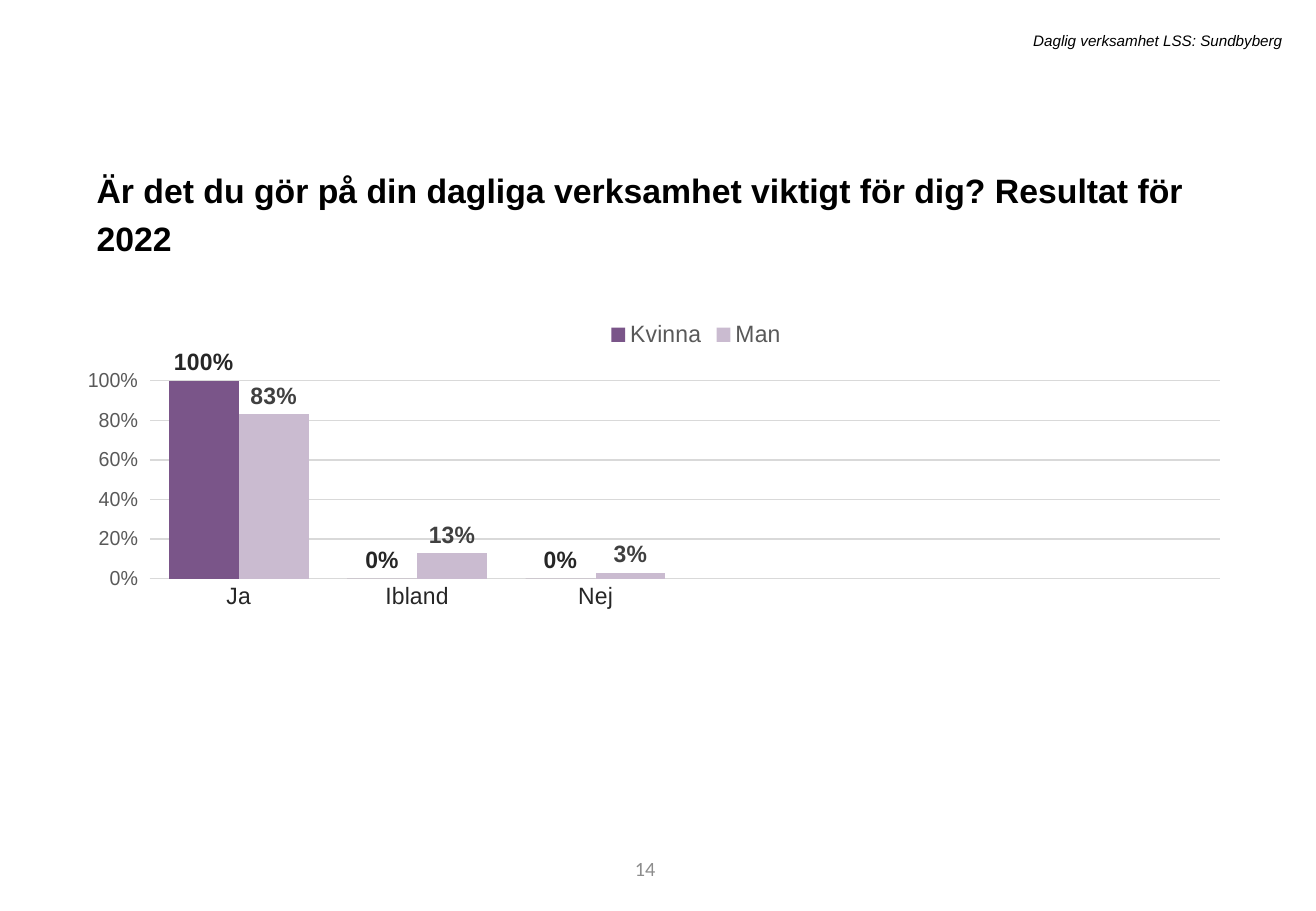
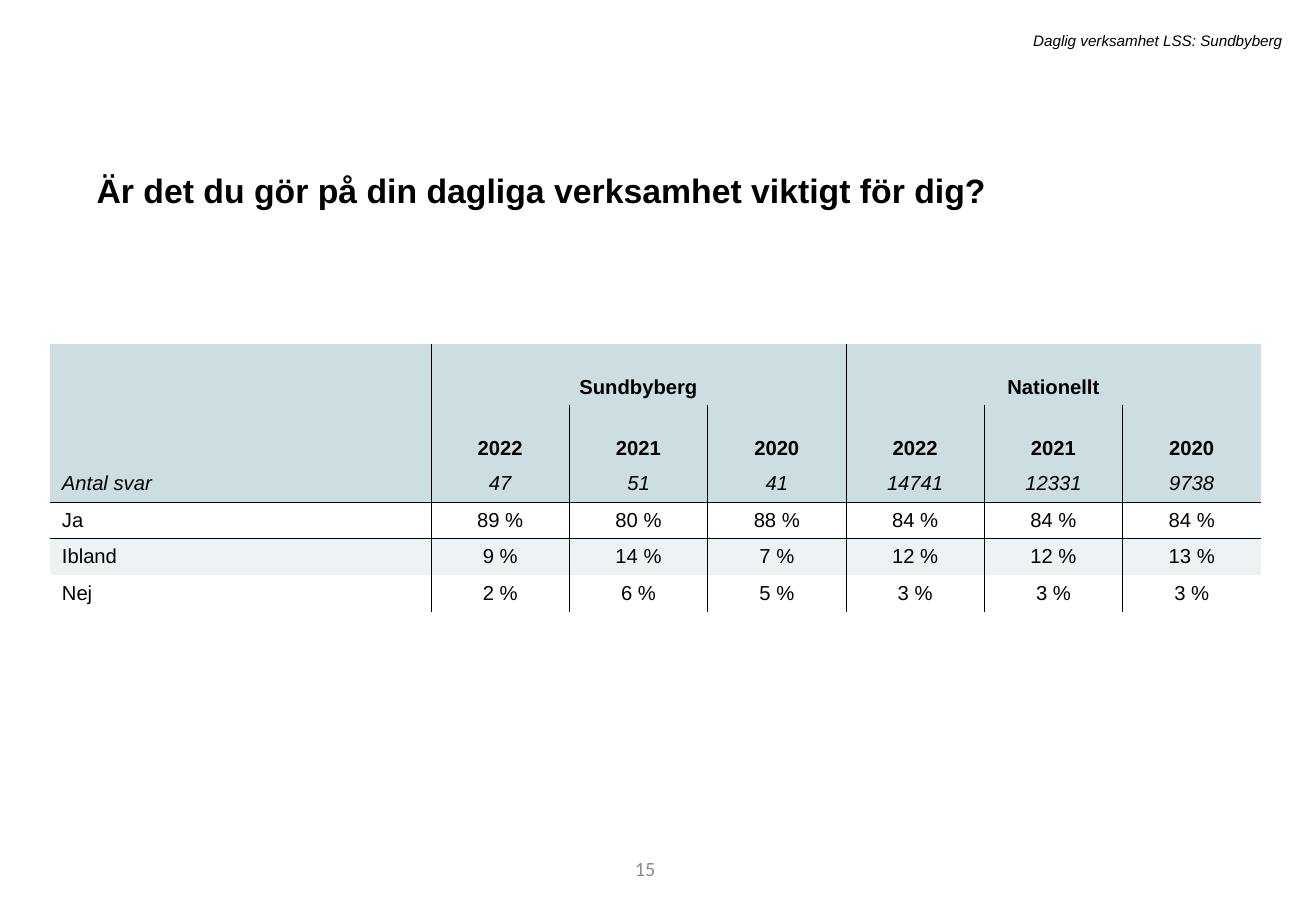
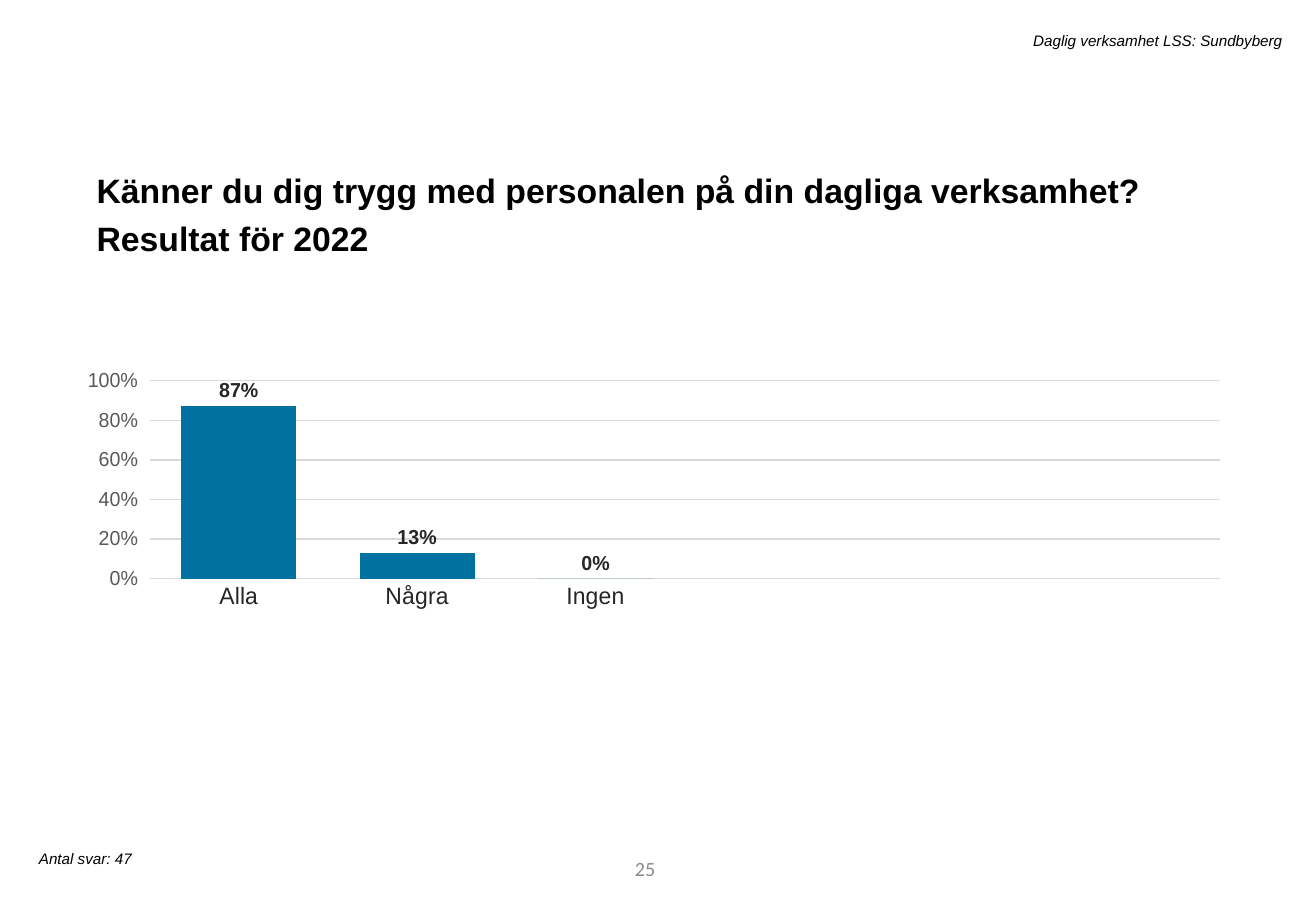
from lxml import etree
from pptx import Presentation
from pptx.chart.data import CategoryChartData
from pptx.dml.color import RGBColor
from pptx.enum.chart import XL_CHART_TYPE as CT, XL_LABEL_POSITION as LP
from pptx.enum.chart import XL_LEGEND_POSITION as LEG, XL_TICK_MARK as TICK
from pptx.enum.text import MSO_ANCHOR as ANC, MSO_AUTO_SIZE as FIT, PP_ALIGN as AL
from pptx.oxml import parse_xml
from pptx.oxml.ns import nsdecls, qn
from pptx.util import Pt

C = {"black": "000000", "number": "8C8C8C", "dark": "262626", "mid": "404040",
     "grey": "595959", "grid": "D9D9D9", "woman": "7A5589", "man": "CABBD0",
     "blue": "0071A1", "head": "CCDEE1", "band": "EDF3F4"}
NO_STYLE = "{2D5ABB26-0587-4C30-8999-92F81FD0307C}"

SLIDES = [
    {"number": "14",
     "title": "Är det du gör på din dagliga verksamhet viktigt för dig? Resultat för 2022",
     "cats": ["Ja", "Ibland", "Nej"], "label_size": 14,
     "series": [("Kvinna", [1, 0, 0], "woman", "dark"),
                ("Man", [0.83, 0.13, 0.03], "man", "mid")]},
    {"number": "15",
     "title": "Är det du gör på din dagliga verksamhet viktigt för dig?",
     "rows": [["", "Sundbyberg", "", "", "Nationellt", "", ""],
              ["", "2022", "2021", "2020", "2022", "2021", "2020"],
              ["Antal svar", "47", "51", "41", "14741", "12331", "9738"],
              ["Ja", "89 %", "80 %", "88 %", "84 %", "84 %", "84 %"],
              ["Ibland", "9 %", "14 %", "7 %", "12 %", "12 %", "13 %"],
              ["Nej", "2 %", "6 %", "5 %", "3 %", "3 %", "3 %"]]},
    {"number": "25",
     "title": "Känner du dig trygg med personalen på din dagliga verksamhet? Resultat för 2022",
     "cats": ["Alla", "Några", "Ingen"], "label_size": 12,
     "series": [("Series 1", [0.87, 0.13, 0], "blue", "dark")],
     "note": "Antal svar: 47"},
]


def style(font, size, color="black", bold=False, italic=False, name="Arial"):
    font.name, font.size, font.bold, font.italic = name, Pt(size), bold, italic
    font.color.rgb = RGBColor.from_string(C[color])


def add_text(s, text, box, align=AL.LEFT, wrap=True, **look):
    tf = s.shapes.add_textbox(*map(Pt, box)).text_frame
    tf.word_wrap = wrap
    p = tf.paragraphs[0]
    p.alignment = align
    r = p.add_run()
    r.text = text
    style(r.font, **look)
    return tf


prs = Presentation()
prs.slide_width, prs.slide_height = Pt(780), Pt(540)

for data in SLIDES:
    s = prs.slides.add_slide(prs.slide_layouts[5])

    # Title
    sp = s.shapes.title
    sp.left, sp.top, sp.width, sp.height = Pt(50), Pt(92), Pt(677), Pt(34)
    tf = sp.text_frame
    tf.word_wrap, tf.auto_size, tf.vertical_anchor = True, FIT.SHAPE_TO_FIT_TEXT, ANC.TOP
    p = tf.paragraphs[0]
    p.alignment, p.line_spacing, p.space_before = AL.LEFT, 1.2, Pt(10)
    r = p.add_run()
    r.text = data["title"]
    style(r.font, 20, bold=True)

    # Header, slide number and note
    tf = add_text(s, "Daglig verksamhet LSS: Sundbyberg", (129, 15, 638, 18),
                  AL.RIGHT, size=9, italic=True)
    tf.auto_size = FIT.SHAPE_TO_FIT_TEXT
    tf = add_text(s, data["number"], (220, 500, 175.5, 29), AL.RIGHT,
                  size=12, color="number", name="Calibri")
    tf.vertical_anchor = ANC.MIDDLE
    if "note" in data:
        tf = add_text(s, data["note"], (16, 500, 204, 18), wrap=False, size=9, italic=True)
        tf.auto_size = FIT.SHAPE_TO_FIT_TEXT

    # Column chart, with three empty categories on the right
    if "series" in data:
        cd = CategoryChartData(number_format="0%")
        cd.categories = data["cats"] + [""] * 3
        for name, values, _, _ in data["series"]:
            cd.add_series(name, values + [None] * 3)
        chart = s.shapes.add_chart(CT.COLUMN_CLUSTERED, Pt(52), Pt(182),
                                   Pt(677), Pt(284), cd).chart
        style(chart.font, 10)
        chart.has_title = False
        plot = chart.plots[0]
        plot.gap_width, plot.vary_by_categories = 55, False

        for ser, (_, _, fill, label) in zip(plot.series, data["series"]):
            ser.format.fill.solid()
            ser.format.fill.fore_color.rgb = RGBColor.from_string(C[fill])
            dl = ser.data_labels
            dl.show_value, dl.position = True, LP.OUTSIDE_END
            dl.number_format, dl.number_format_is_linked = "0%", False
            style(dl.font, data["label_size"], label, bold=True)

        cat, val = chart.category_axis, chart.value_axis
        cat.major_tick_mark = TICK.NONE
        style(cat.tick_labels.font, 14, "dark")
        val.minimum_scale, val.maximum_scale, val.major_unit = 0, 1, 0.2
        val.major_tick_mark = TICK.OUTSIDE
        val.tick_labels.number_format = "0%"
        val.tick_labels.number_format_is_linked = False
        style(val.tick_labels.font, 12, "grey")
        val.format.line.fill.background()
        for line in (cat.format.line, val.major_gridlines.format.line):
            line.width = Pt(0.75)
            line.color.rgb = RGBColor.from_string(C["grid"])

        # Fixed places of the plot area and the legend
        area = chart.plots[0]._element.getparent()
        for old in area.findall(qn("c:layout")):
            area.remove(old)
        marks = {"layoutTarget": "inner", "xMode": "edge", "yMode": "edge",
                 "x": 0.03, "y": 0.15, "w": 0.96, "h": 0.41}
        marks.update(x=0.025, y=0.154, w=0.966, h=0.413)
        layout = parse_xml(f"<c:layout {nsdecls('c')}><c:manualLayout/></c:layout>")
        for tag, value in marks.items():
            etree.SubElement(layout[0], qn(f"c:{tag}")).set("val", str(value))
        area.insert(0, layout)

        chart.has_legend = len(data["series"]) > 1
        if chart.has_legend:
            legend = chart.legend
            legend.position, legend.include_in_layout = LEG.TOP, False
            style(legend.font, 14, "grey")
            for old in legend._element.findall(qn("c:layout")):
                legend._element.remove(old)
            layout = parse_xml(f"<c:layout {nsdecls('c')}><c:manualLayout/></c:layout>")
            for tag, value in {"xMode": "edge", "yMode": "edge", "x": 0.435, "y": 0.02}.items():
                etree.SubElement(layout[0], qn(f"c:{tag}")).set("val", str(value))
            legend._element.find(qn("c:legendPos")).addnext(layout)

    # Results table
    if "rows" in data:
        widths, heights = [226] + [82] * 6, [36, 36, 18, 20, 20, 20]
        table = s.shapes.add_table(6, 7, Pt(29.5), Pt(204), Pt(sum(widths)),
                                   Pt(sum(heights))).table
        table.first_row = table.horz_banding = False
        table._tbl.tblPr.find(qn("a:tableStyleId")).text = NO_STYLE
        for col, width in zip(table.columns, widths):
            col.width = Pt(width)
        for row, height in zip(table.rows, heights):
            row.height = Pt(height)
        for first in (1, 4):
            table.cell(0, first).merge(table.cell(0, first + 2))

        for i, texts in enumerate(data["rows"]):
            for j, text in enumerate(texts):
                cell = table.cell(i, j)
                cell.vertical_anchor = ANC.BOTTOM if i < 2 else ANC.MIDDLE
                if text:
                    p = cell.text_frame.paragraphs[0]
                    p.alignment = AL.CENTER if j else AL.LEFT
                    r = p.add_run()
                    r.text = text
                    style(r.font, 12, bold=i < 2, italic=i == 2)

                # The top row is divided only between its groups
                dividers = (1, 4) if i == 0 else range(1, 7)
                sides = {"L": j in dividers, "R": j + 1 in dividers,
                         "T": i == 3, "B": i == 2}
                for side, drawn in sides.items():
                    if drawn:
                        cell._tc.get_or_add_tcPr().append(parse_xml(
                            f'<a:ln{side} {nsdecls("a")} w="{Pt(0.25)}"><a:solidFill>'
                            f'<a:srgbClr val="{C["black"]}"/></a:solidFill></a:ln{side}>'))
                if i < 3 or i == 4:
                    cell.fill.solid()
                    cell.fill.fore_color.rgb = RGBColor.from_string(C["head" if i < 3 else "band"])
                else:
                    cell.fill.background()

prs.save("out.pptx")
